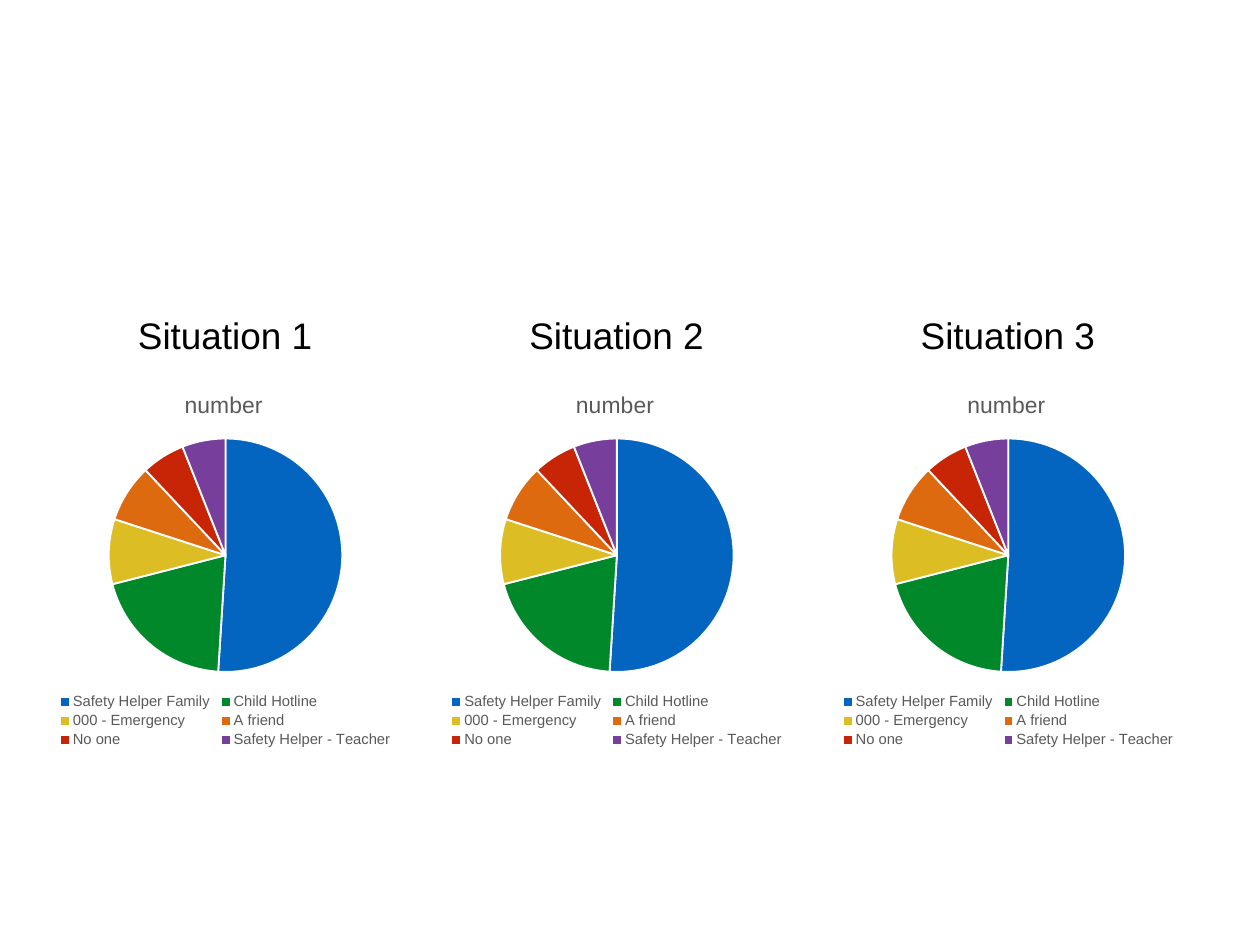
"""Build a slide with three pie charts, one for each situation."""
from lxml.etree import SubElement
from pptx import Presentation
from pptx.chart.data import CategoryChartData
from pptx.dml.color import RGBColor
from pptx.enum.chart import XL_CHART_TYPE as ChartType, XL_LEGEND_POSITION as LegendPosition
from pptx.enum.text import MSO_ANCHOR as Anchor, MSO_AUTO_SIZE as AutoSize, PP_ALIGN as Align
from pptx.oxml import parse_xml
from pptx.oxml.ns import nsdecls, qn
from pptx.util import Cm, Pt


def style(target, size, color):
    """Set the typeface, size and colour of a font."""
    for name, value in {"name": "Arial", "size": Pt(size), "bold": False}.items():
        setattr(target, name, value)
    target.color.rgb = RGBColor.from_string(color)


def place(element, index, values):
    """Give a chart part a fixed place, as fractions of the chart."""
    for old in element.findall(qn("c:layout")):
        element.remove(old)
    layout = parse_xml(f"<c:layout {nsdecls('c')}/>")
    manual = SubElement(layout, qn("c:manualLayout"))
    for name, value in values.items():
        SubElement(manual, qn(f"c:{name}")).set("val", str(value))
    element.insert(index, layout)


EDGES = {"xMode": "edge", "yMode": "edge"}
ANSWERS = {
    "Safety Helper Family": (51, "0365C0"),
    "Child Hotline": (20, "00882B"),
    "000 - Emergency": (9, "DCBD23"),
    "A friend": (8, "DE6A10"),
    "No one": (6, "C82506"),
    "Safety Helper - Teacher": (6, "773F9B"),
}
COLUMN_STEP = 11.22

presentation = Presentation()
presentation.slide_width = Cm(36.12)
presentation.slide_height = Cm(27.1)
slide = presentation.slides.add_slide(presentation.slide_layouts[6])

chart_data = CategoryChartData()
chart_data.categories = list(ANSWERS)
chart_data.add_series("number", [value for value, color in ANSWERS.values()])

for column in range(3):
    left = column * COLUMN_STEP
    chart = slide.shapes.add_chart(
        ChartType.PIE, Cm(left), Cm(10.74), Cm(12.93), Cm(10.8), chart_data
    ).chart
    style(chart.font, 10, "000000")

    chart.has_title = True
    title_frame = chart.chart_title.text_frame
    title_frame.text = "number"
    style(title_frame.paragraphs[0].runs[0].font, 18.6, "595959")

    chart.has_legend = True
    chart.legend.position = LegendPosition.BOTTOM
    chart.legend.include_in_layout = False
    style(chart.legend.font, 12, "595959")

    plot = chart.plots[0]
    plot.vary_by_categories = True
    for index, (value, color) in enumerate(ANSWERS.values()):
        point_format = plot.series[0].points[index].format
        point_format.fill.solid()
        point_format.fill.fore_color.rgb = RGBColor.from_string(color)
        point_format.line.color.rgb = RGBColor.from_string("FFFFFF")
        point_format.line.width = Pt(1.5)

    chart_element = chart.element.find(qn("c:chart"))
    place(chart_element.find(qn("c:title")), 1, EDGES | {"x": 0.4, "y": 0.03})
    place(
        chart_element.find(qn("c:plotArea")), 0,
        {"layoutTarget": "inner"} | EDGES | {"x": 0.24, "y": 0.17, "w": 0.52, "h": 0.62},
    )
    place(
        chart_element.find(qn("c:legend")), 1,
        EDGES | {"x": 0.12, "y": 0.84, "w": 0.76, "h": 0.16},
    )

for column in range(3):
    label = slide.shapes.add_textbox(
        Cm(2.72 + column * COLUMN_STEP), Cm(8.81), Cm(7.47), Cm(1.57)
    )
    frame = label.text_frame
    frame_format = {
        "word_wrap": True,
        "auto_size": AutoSize.SHAPE_TO_FIT_TEXT,
        "vertical_anchor": Anchor.MIDDLE,
        "margin_left": Cm(0.15),
        "margin_right": Cm(0.15),
        "margin_top": Cm(0.15),
        "margin_bottom": Cm(0.15),
    }
    for name, value in frame_format.items():
        setattr(frame, name, value)
    paragraph = frame.paragraphs[0]
    paragraph.text = f"Situation {column + 1}"
    paragraph.alignment = Align.CENTER
    style(paragraph.runs[0].font, 30, "000000")

presentation.save("out.pptx")
